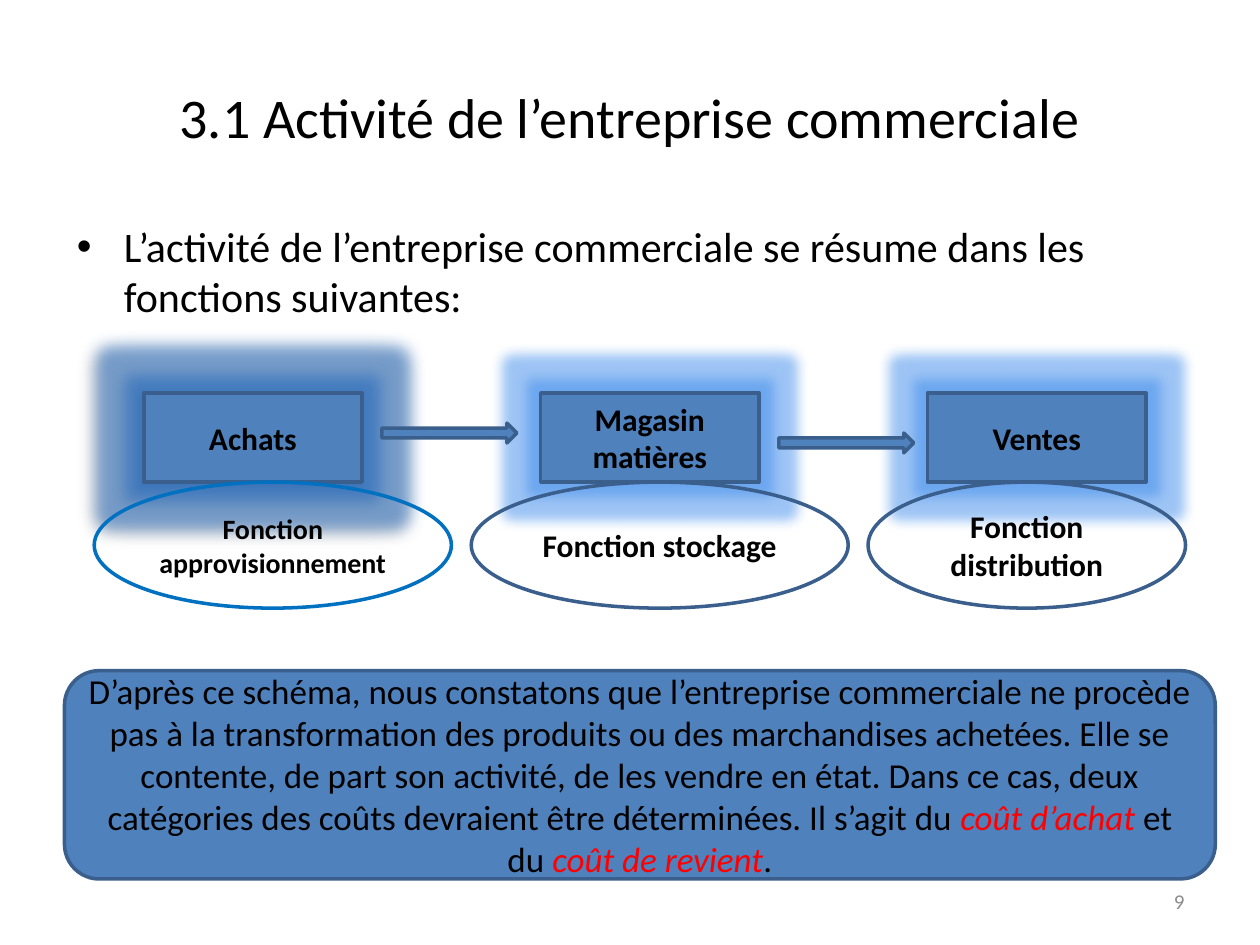
from lxml import etree
from pptx import Presentation
from pptx import util as u
from pptx.dml.color import RGBColor
from pptx.enum import shapes, text
from pptx.oxml import ns

Cm, Pt = u.Cm, u.Pt
Kind = shapes.MSO_SHAPE
Align = text.PP_ALIGN
HUES = {"ink": "000000", "blue": "4F81BD", "edge": "3A5F8C", "sky": "0070C0",
        "glow": "3B8AEB", "deep": "1F6AC4", "red": "FF0000", "gray": "8C8C8C"}


def write(frame, runs, size, align=Align.CENTER, bold=False,
          anchor=text.MSO_ANCHOR.MIDDLE):
    """Fill a frame with (words, hue, italic) runs in one paragraph."""
    frame.word_wrap = True
    frame.vertical_anchor = anchor
    para = frame.paragraphs[0]
    para.alignment = align
    for words, hue, slant in runs:
        run = para.add_run()
        run.text = words
        font = run.font
        font.name, font.size, font.bold, font.italic = "Calibri", Pt(size), bold, slant
        font.color.rgb = RGBColor.from_string(HUES[hue])
    return para


def draw(kind, left, top, width, height, fill="blue", edge="edge"):
    """Add an outlined shape without a shadow; fill None leaves it open."""
    shape = slide.shapes.add_shape(kind, Cm(left), Cm(top), Cm(width), Cm(height))
    shape.shadow.inherit = False
    if fill:
        shape.fill.solid()
        shape.fill.fore_color.rgb = RGBColor.from_string(HUES[fill])
    else:
        shape.fill.background()
    shape.line.color.rgb = RGBColor.from_string(HUES[edge])
    shape.line.width = Pt(2)
    return shape


deck = Presentation()
deck.slide_width, deck.slide_height = Cm(25.4), Cm(19.05)
slide = deck.slides.add_slide(deck.slide_layouts[5])

# Title
title = slide.shapes.title
title.left, title.top, title.width, title.height = Cm(1.27), Cm(0.76), Cm(22.86), Cm(3.18)
write(title.text_frame, [("3.1 Activité de l’entreprise commerciale", "ink", False)], 32)

# Bulleted lead
lead = slide.shapes.add_textbox(Cm(1.3), Cm(4.32), Cm(22.86), Cm(2.6))
para = write(lead.text_frame,
             [("L’activité de l’entreprise commerciale se résume dans les "
               "fonctions suivantes:", "ink", False)],
             24, Align.LEFT, anchor=text.MSO_ANCHOR.TOP)
para.space_before = Pt(5)
props = para._p.get_or_add_pPr()
props.set("marL", str(Cm(0.95)))
props.set("indent", str(Cm(-0.95)))
etree.SubElement(props, ns.qn("a:buFont"), typeface="Arial")
etree.SubElement(props, ns.qn("a:buChar"), char="•")

# Page number
page = slide.shapes.add_textbox(Cm(18.21), Cm(17.65), Cm(5.92), Cm(1.02))
write(page.text_frame, [("9", "gray", False)], 12, Align.RIGHT)

# Stage boxes with a glow
for words, left, hue, reach in [("Achats", 2.9, "deep", 18),
                                ("Magasin matières", 10.9, "glow", 14),
                                ("Ventes", 18.7, "glow", 14)]:
    box = draw(Kind.RECTANGLE, left, 7.92, 4.4, 1.8)
    write(box.text_frame, [(words, "ink", False)], 18, bold=True)
    effects = box._element.spPr.find(ns.qn("a:effectLst"))
    glow = etree.SubElement(effects, ns.qn("a:glow"), rad=str(Pt(reach)))
    tint = etree.SubElement(glow, ns.qn("a:srgbClr"), val=HUES[hue])
    etree.SubElement(tint, ns.qn("a:alpha"), val="50000")
    if words == "Achats":
        cast = etree.SubElement(effects, ns.qn("a:outerShdw"), blurRad=str(Pt(4)),
                                dist=str(Pt(3)), dir="8100000", algn="tr",
                                rotWithShape="0")
        tint = etree.SubElement(cast, ns.qn("a:srgbClr"), val=HUES["ink"])
        etree.SubElement(tint, ns.qn("a:alpha"), val="40000")

# Function ovals
for words, left, width, size, edge in [
        ("Fonction approvisionnement", 1.9, 7.2, 16, "sky"),
        ("Fonction stockage", 9.5, 7.6, 18, "edge"),
        ("Fonction distribution", 17.5, 6.4, 18, "edge")]:
    oval = draw(Kind.OVAL, left, 9.72, width, 2.54, None, edge)
    write(oval.text_frame, [(words, "ink", False)], size, bold=True)

# Block arrows between stages
for left, top in [(7.7, 8.53), (15.7, 8.73)]:
    draw(Kind.RIGHT_ARROW, left, top, 2.72, 0.4)

# Conclusion
panel = draw(Kind.ROUNDED_RECTANGLE, 1.3, 13.52, 23.2, 4.2)
write(panel.text_frame, [
    ("D’après ce schéma, nous constatons que l’entreprise commerciale ne procède "
     "pas à la transformation des produits ou des marchandises achetées. Elle se "
     "contente, de part son activité, de les vendre en état. Dans ce cas, deux "
     "catégories des coûts devraient être déterminées. Il s’agit du ", "ink", False),
    ("coût d’achat ", "red", True),
    ("et du ", "ink", False),
    ("coût de revient", "red", True),
    (".", "ink", False)], 20)

deck.save("out.pptx")
